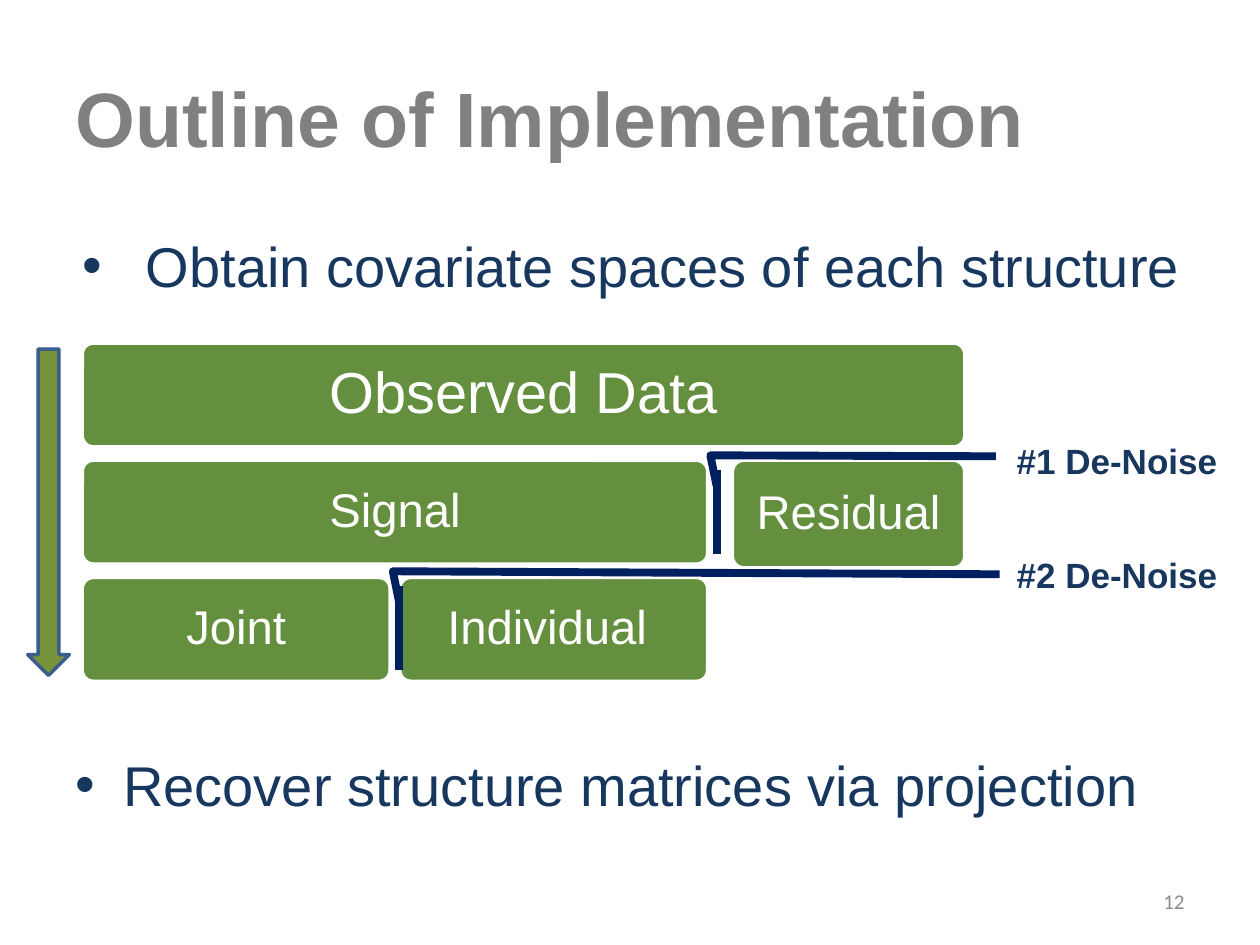
from lxml import etree
from pptx import Presentation
from pptx.dml.color import RGBColor
from pptx.enum import shapes, text
from pptx.oxml import ns
from pptx.util import Inches, Pt

GREY = RGBColor(0x80, 0x80, 0x80)
NUMBER_GREY = RGBColor(0x8C, 0x8C, 0x8C)
INK = RGBColor(0x17, 0x37, 0x5E)
NAVY = RGBColor(0x00, 0x20, 0x60)
GREEN = RGBColor(0x64, 0x8F, 0x3F)
OLIVE = RGBColor(0x77, 0x93, 0x3C)
ARROW_EDGE = RGBColor(0x3A, 0x5F, 0x8C)
WHITE = RGBColor(0xFF, 0xFF, 0xFF)


def inches(*lengths):
    return [Inches(length) for length in lengths]


def style_paragraph(paragraph, size, color, bold=False, font="Arial"):
    for run in paragraph.runs:
        run.font.name = font
        run.font.size = Pt(size)
        run.font.bold = bold
        run.font.color.rgb = color


def add_label(slide, box, words, size, color, bold=False, font="Arial", wrap=True):
    label = slide.shapes.add_textbox(*inches(*box))
    frame = label.text_frame
    frame.word_wrap = wrap
    frame.text = words
    style_paragraph(frame.paragraphs[0], size, color, bold, font)
    return frame


def add_title(slide, box, words):
    frame = add_label(slide, box, words, 44, GREY, bold=True)
    frame.vertical_anchor = text.MSO_ANCHOR.MIDDLE


def add_bullet(slide, box, words, margin, hanging):
    frame = add_label(slide, box, words, 32, INK)
    properties = frame.paragraphs[0]._p.get_or_add_pPr()
    properties.set("marL", str(Inches(margin)))
    properties.set("indent", str(-Inches(hanging)))
    etree.SubElement(properties, ns.qn("a:buFont")).set("typeface", "Arial")
    etree.SubElement(properties, ns.qn("a:buChar")).set("char", "•")


def add_block(slide, box, words, size):
    block = slide.shapes.add_shape(shapes.MSO_SHAPE.ROUNDED_RECTANGLE, *inches(*box))
    block.shadow.inherit = False
    block.adjustments[0] = 0.1
    block.fill.solid()
    block.fill.fore_color.rgb = GREEN
    block.line.color.rgb = WHITE
    block.line.width = Pt(1)
    frame = block.text_frame
    frame.word_wrap = True
    frame.vertical_anchor = text.MSO_ANCHOR.MIDDLE
    frame.text = words
    paragraph = frame.paragraphs[0]
    paragraph.alignment = text.PP_ALIGN.CENTER
    paragraph.line_spacing = 0.9
    style_paragraph(paragraph, size, WHITE)


def add_hierarchy(slide, left, top, width):
    height, pitch = 0.81, 0.93
    signal_width, half_width = 4.95, 2.43
    second, third = top + pitch, top + 2 * pitch
    residual_width = 1.83
    add_block(slide, (left, top, width, height), "Observed Data", 33)
    add_block(slide, (left, second, signal_width, height), "Signal", 27)
    add_block(slide, (left, third, half_width, height), "Joint", 27)
    add_block(slide, (left + signal_width - half_width, third, half_width, height),
              "Individual ", 27)
    add_block(slide, (left + width - residual_width, second, residual_width, 0.84),
              "Residual", 27)


def add_step(slide, box, tip, words, label_top):
    callout = slide.shapes.add_shape(
        shapes.MSO_SHAPE.LINE_CALLOUT_2_ACCENT_BAR, *inches(*box))
    callout.shadow.inherit = False
    callout.fill.background()
    callout.line.color.rgb = NAVY
    callout.line.width = Pt(4.5)
    for index, value in enumerate((0.188, -0.083, -0.173, -0.132, *tip)):
        callout.adjustments[index] = value
    add_label(slide, (7.97, label_top, 1.81, 0.44), words, 20, INK, bold=True, wrap=False)


def add_direction_arrow(slide, box):
    arrow = slide.shapes.add_shape(shapes.MSO_SHAPE.RIGHT_ARROW, *inches(*box))
    arrow.rotation = 90
    arrow.shadow.inherit = False
    arrow.fill.solid()
    arrow.fill.fore_color.rgb = OLIVE
    arrow.line.color.rgb = ARROW_EDGE
    arrow.line.width = Pt(2)


def add_slide_number(slide, box, number):
    frame = add_label(slide, box, number, 12, NUMBER_GREY, font="Calibri")
    frame.vertical_anchor = text.MSO_ANCHOR.MIDDLE
    frame.paragraphs[0].alignment = text.PP_ALIGN.RIGHT


def main():
    presentation = Presentation()
    presentation.slide_width, presentation.slide_height = inches(10, 7.5)
    slide = presentation.slides.add_slide(presentation.slide_layouts[6])
    add_title(slide, (0.5, 0.3, 9, 1.25), "Outline of Implementation")
    add_bullet(slide, (0.5, 1.79, 9, 0.62),
               "Obtain covariate spaces of each structure", 0.56, 0.5)
    add_bullet(slide, (0.5, 5.91, 9, 0.62),
               "Recover structure matrices via projection", 0.38, 0.38)
    add_hierarchy(slide, 0.66, 2.73, 6.99)
    add_step(slide, (5.77, 3.73, 1, 0.67), (-0.162, 2.135), "#1 De-Noise", 3.44)
    add_step(slide, (3.25, 4.65, 1, 0.67), (-0.137, 4.685), "#2 De-Noise", 4.34)
    add_direction_arrow(slide, (-0.91, 3.9, 2.59, 0.33))
    add_slide_number(slide, (7.17, 6.95, 2.33, 0.4), "12")
    presentation.save("out.pptx")


if __name__ == "__main__":
    main()
